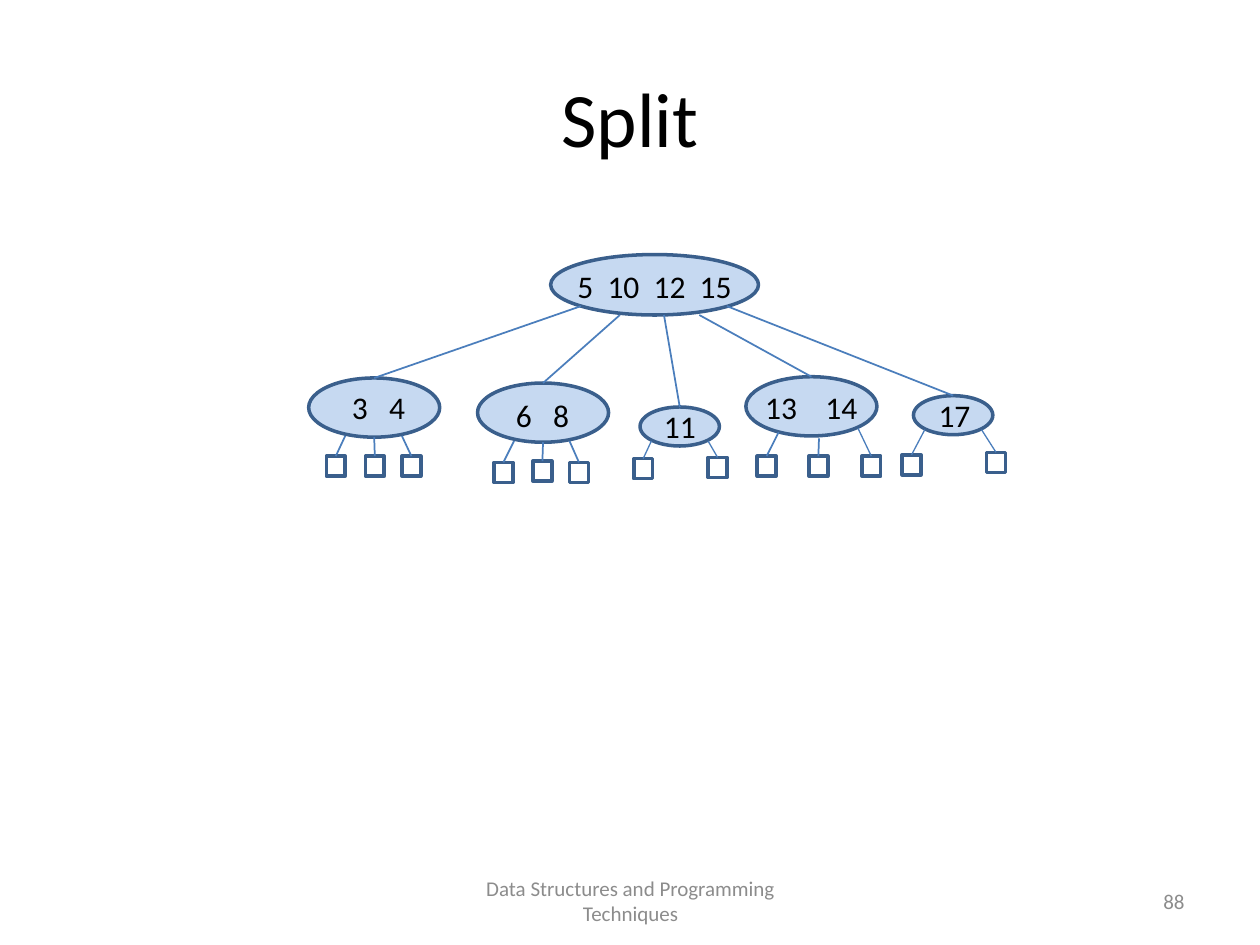
import pptx
import pptx.util
import pptx.dml.color
import pptx.enum.shapes
import pptx.enum.text
from lxml import etree

Inches = pptx.util.Inches
Pt = pptx.util.Pt
RGBColor = pptx.dml.color.RGBColor
Shape = pptx.enum.shapes.MSO_SHAPE
Align = pptx.enum.text.PP_ALIGN
Anchor = pptx.enum.text.MSO_ANCHOR

BLACK = RGBColor(0x00, 0x00, 0x00)
GRAY = RGBColor(0x8C, 0x8C, 0x8C)
NODE_FILL = RGBColor(0xC6, 0xD9, 0xF1)
OUTLINE = RGBColor(0x3A, 0x5F, 0x8C)
EDGE = RGBColor(0x4B, 0x7E, 0xBC)
FONT = "Calibri"
LEAF_SIZE = (0.15, 0.16)
WIDE = (1.04, 0.47)
NARROW = (0.63, 0.31)

FRAME_TEXTS = [
    ("Split", (0.5, 0.3, 9, 1.25), 44, BLACK, Align.CENTER),
    ("Data Structures and Programming Techniques", (3.42, 6.95, 3.17, 0.4), 12, GRAY, Align.CENTER),
    ("88", (7.17, 6.95, 2.33, 0.4), 12, GRAY, Align.RIGHT),
]

ROOT = {"keys": "5  10  12  15", "box": (4.37, 2.02, 1.65, 0.48), "label": (4.47, 2.07, 1.45)}

# each leaf: left, top, edge start x, edge start y, edge width
CHILDREN = [
    {"keys": "3   4", "box": (2.45, 3, *WIDE), "label": (2.52, 3.03, 0.97), "from": (4.61, 2.43),
     "leaves": [(2.59, 3.62, 2.74, 3.46, 1), (2.9, 3.62, 2.97, 3.47, 1), (3.19, 3.62, 3.19, 3.46, 1)]},
    {"keys": "6   8", "box": (3.79, 3.04, *WIDE), "label": (3.87, 3.09, 0.87), "from": (4.92, 2.5),
     "leaves": [(3.92, 3.67, 4.08, 3.5, 1), (4.23, 3.66, 4.31, 3.51, 1), (4.52, 3.67, 4.52, 3.5, 1)]},
    {"keys": "11", "box": (5.08, 3.23, *NARROW), "label": (5.15, 3.18, 0.49), "from": (5.27, 2.5),
     "leaves": [(5.03, 3.64, 5.17, 3.5, 0.75), (5.62, 3.63, 5.62, 3.5, 0.75)]},
    {"keys": "13    14", "box": (5.92, 2.99, *WIDE), "label": (5.96, 3.03, 0.96), "from": (5.55, 2.5),
     "leaves": [(6.01, 3.62, 6.18, 3.43, 1), (6.42, 3.62, 6.5, 3.48, 1), (6.84, 3.62, 6.81, 3.4, 0.75)]},
    {"keys": "17", "box": (7.25, 3.14, *NARROW), "label": (7.33, 3.09, 0.49), "from": (5.77, 2.43),
     "leaves": [(7.16, 3.61, 7.34, 3.41, 0.75), (7.83, 3.59, 7.79, 3.41, 0.75)]},
]


def add_text(slide, text, box, size, color, align, anchor, wrap):
    text_box = slide.shapes.add_textbox(*map(Inches, box))
    frame = text_box.text_frame
    frame.word_wrap = wrap
    frame.vertical_anchor = anchor
    paragraph = frame.paragraphs[0]
    paragraph.alignment = align
    run = paragraph.add_run()
    run.text = text
    run.font.name = FONT
    run.font.size = Pt(size)
    run.font.color.rgb = color


def add_outlined(slide, kind, box, fill=None):
    shape = slide.shapes.add_shape(kind, *map(Inches, box))
    shape.shadow.inherit = False
    if fill is None:
        shape.fill.background()
    else:
        shape.fill.solid()
        shape.fill.fore_color.rgb = fill
    shape.line.color.rgb = OUTLINE
    shape.line.width = Pt(2)
    return shape


def add_edge(slide, start, target, width):
    x, y = map(Inches, start)
    connector = slide.shapes.add_connector(
        pptx.enum.shapes.MSO_CONNECTOR.STRAIGHT, x, y, target.left + target.width // 2, target.top)
    connector.end_connect(target, 0)
    connector.line.color.rgb = EDGE
    connector.line.width = Pt(width)
    properties = connector._element.spPr
    etree.SubElement(properties, pptx.oxml.ns.qn("a:effectLst"))


def add_node(slide, node):
    ellipse = add_outlined(slide, Shape.OVAL, node["box"], NODE_FILL)
    add_text(slide, node["keys"], (*node["label"], 0.4), 18, BLACK, Align.CENTER, Anchor.TOP, False)
    return ellipse


def main():
    presentation = pptx.Presentation()
    presentation.slide_width = Inches(10)
    presentation.slide_height = Inches(7.5)
    slide = presentation.slides.add_slide(presentation.slide_layouts[6])

    for text, box, size, color, align in FRAME_TEXTS:
        add_text(slide, text, box, size, color, align, Anchor.MIDDLE, True)

    add_node(slide, ROOT)
    for child in CHILDREN:
        ellipse = add_node(slide, child)
        add_edge(slide, child["from"], ellipse, 1)
        for left, top, start_x, start_y, width in child["leaves"]:
            leaf = add_outlined(slide, Shape.RECTANGLE, (left, top, *LEAF_SIZE))
            add_edge(slide, (start_x, start_y), leaf, width)

    presentation.save("out.pptx")


if __name__ == "__main__":
    main()
